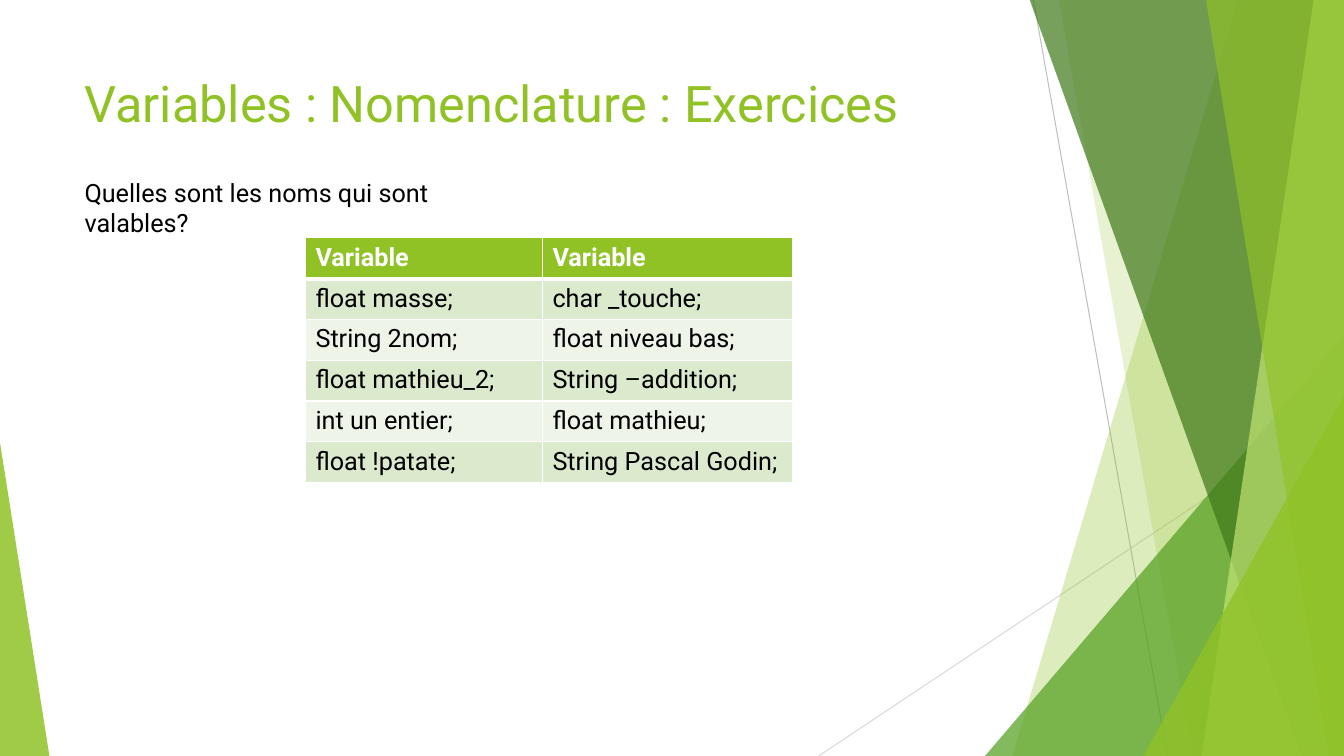
from lxml import etree
from pptx import Presentation
from pptx import util as u
from pptx.dml.color import RGBColor
from pptx.enum import shapes, text
from pptx.oxml.ns import qn

PX = 9144  # EMU per px, 100 px to the inch
WIDTH, HEIGHT = 1333, 750

THEME = {
    "font": "Roboto",
    "lime": "90C226", "pale_lime": "C0E474", "green": "54A021", "dark": "3F7819",
    "white": "FFFFFF", "black": "000000",
    "line": "BFBFBF", "light_line": "D9D9D9",
    "bands": ("DBE9CD", "EEF4E8"),
    "title_size": 36, "body_size": 18,
}

ROWS = [
    ("Variable", "Variable"),
    ("float masse;", "char _touche;"),
    ("String 2nom;", "float niveau bas;"),
    ("float mathieu_2;", "String –addition;"),
    ("int un entier;", "float mathieu;"),
    ("float !patate;", "String Pascal Godin;"),
]


def px(*lengths):
    return [u.Emu(length * PX) for length in lengths]


def apply_format(target, values):
    for name, value in values.items():
        setattr(target, name, value)


def paint(shape, color, opacity):
    shape.shadow.inherit = False
    shape.line.fill.background()
    shape.fill.solid()
    shape.fill.fore_color.rgb = RGBColor.from_string(color)
    color_node = shape.fill._xPr.find(qn("a:solidFill"))[0]
    etree.SubElement(color_node, qn("a:alpha"), val=str(opacity * 1000))


def write(text_frame, words, size, color, bold=False):
    run = text_frame.paragraphs[0].add_run()
    run.text = words
    apply_format(run.font, {"name": THEME["font"], "size": u.Pt(size), "bold": bold})
    run.font.color.rgb = RGBColor.from_string(color)


def add_line(slide, start, end, color):
    line = slide.shapes.add_connector(
        shapes.MSO_CONNECTOR.STRAIGHT, *px(*start), *px(*end))
    line.line.width = u.Pt(0.75)
    line.line.color.rgb = RGBColor.from_string(color)
    etree.SubElement(line._element.spPr, qn("a:effectLst"))


def add_band(slide, top_left, top_right, bottom_left, bottom_right, color, opacity):
    builder = slide.shapes.build_freeform(top_left, -1, scale=PX)
    builder.add_line_segments(
        [(top_right, -1), (bottom_right, HEIGHT), (bottom_left, HEIGHT)], close=True)
    paint(builder.convert_to_shape(), color, opacity)


def add_corner(slide, box, apex, color, opacity):
    triangle = slide.shapes.add_shape(
        shapes.MSO_SHAPE.ISOSCELES_TRIANGLE, *px(*box))
    triangle.adjustments[0] = apex
    paint(triangle, color, opacity)


def add_decoration(slide, box):
    left, top, width, height = box
    right, bottom = left + width, top + height

    def band(top_left, top_right, bottom_left, color, opacity):
        add_band(slide, top_left, top_right, bottom_left, right, THEME[color], opacity)

    def right_corner(corner_width, corner_height, color, opacity):
        corner = (right - corner_width, bottom - corner_height,
                  corner_width, corner_height)
        add_corner(slide, corner, 1, THEME[color], opacity)

    # Thin crossing lines
    add_line(slide, (1025, top), (1158, bottom), THEME["line"])
    add_line(slide, (right, 403), (812, bottom), THEME["light_line"])
    # Overlapping bands and corners, back to front
    band(1228, right, 1004, "lime", 30)
    band(1050, right, 1183, "lime", 20)
    right_corner(356, 417, "green", 72)
    band(1021, right, 1291, "dark", 70)
    band(1303, right, 1192, "pale_lime", 70)
    band(1196, right, 1318, "lime", 65)
    right_corner(199, 357, "lime", 80)
    # Left corner
    add_corner(slide, (left, bottom - 311, 49, 311), 0, THEME["lime"], 85)


def add_text(slide, box, words, size, color):
    frame = slide.shapes.add_textbox(*px(*box)).text_frame
    apply_format(frame, {"word_wrap": True, "vertical_anchor": text.MSO_ANCHOR.TOP})
    write(frame, words, size, color)


def add_cell_borders(cell, bottom_width):
    properties = cell._tc.get_or_add_tcPr()
    widths = {"lnL": 1, "lnR": 1, "lnT": 1, "lnB": bottom_width}
    for position, (side, width) in enumerate(widths.items()):
        border = etree.Element(qn(f"a:{side}"), w=str(u.Pt(width)))
        fill = etree.SubElement(border, qn("a:solidFill"))
        etree.SubElement(fill, qn("a:srgbClr"), val=THEME["white"])
        properties.insert(position, border)


def add_variable_table(slide, box):
    table = slide.shapes.add_table(len(ROWS), 2, *px(*box)).table
    first_width = 235
    table.columns[0].width, table.columns[1].width = px(first_width, box[2] - first_width)
    for row, names in enumerate(ROWS):
        header = row == 0
        fill = THEME["lime"] if header else THEME["bands"][(row - 1) % 2]
        color = THEME["white"] if header else THEME["black"]
        for column, name in enumerate(names):
            cell = table.cell(row, column)
            cell.fill.solid()
            cell.fill.fore_color.rgb = RGBColor.from_string(fill)
            add_cell_borders(cell, 3 if header else 1)
            write(cell.text_frame, name, THEME["body_size"], color, header)


def build_exercise_slide(presentation):
    slide = presentation.slides.add_slide(presentation.slide_layouts[6])
    add_decoration(slide, (0, 0, WIDTH, HEIGHT))
    # Title
    add_text(slide, (74, 67, 940, 144), "Variables : Nomenclature : Exercices",
             THEME["title_size"], THEME["lime"])
    # Table of candidate names
    add_variable_table(slide, (303, 236, 483, 243))
    # Question
    add_text(slide, (74, 171, 460, 40), "Quelles sont les noms qui sont valables?",
             THEME["body_size"], THEME["black"])


def main():
    presentation = Presentation()
    presentation.slide_width, presentation.slide_height = px(WIDTH, HEIGHT)
    build_exercise_slide(presentation)
    presentation.save("out.pptx")


if __name__ == "__main__":
    main()
